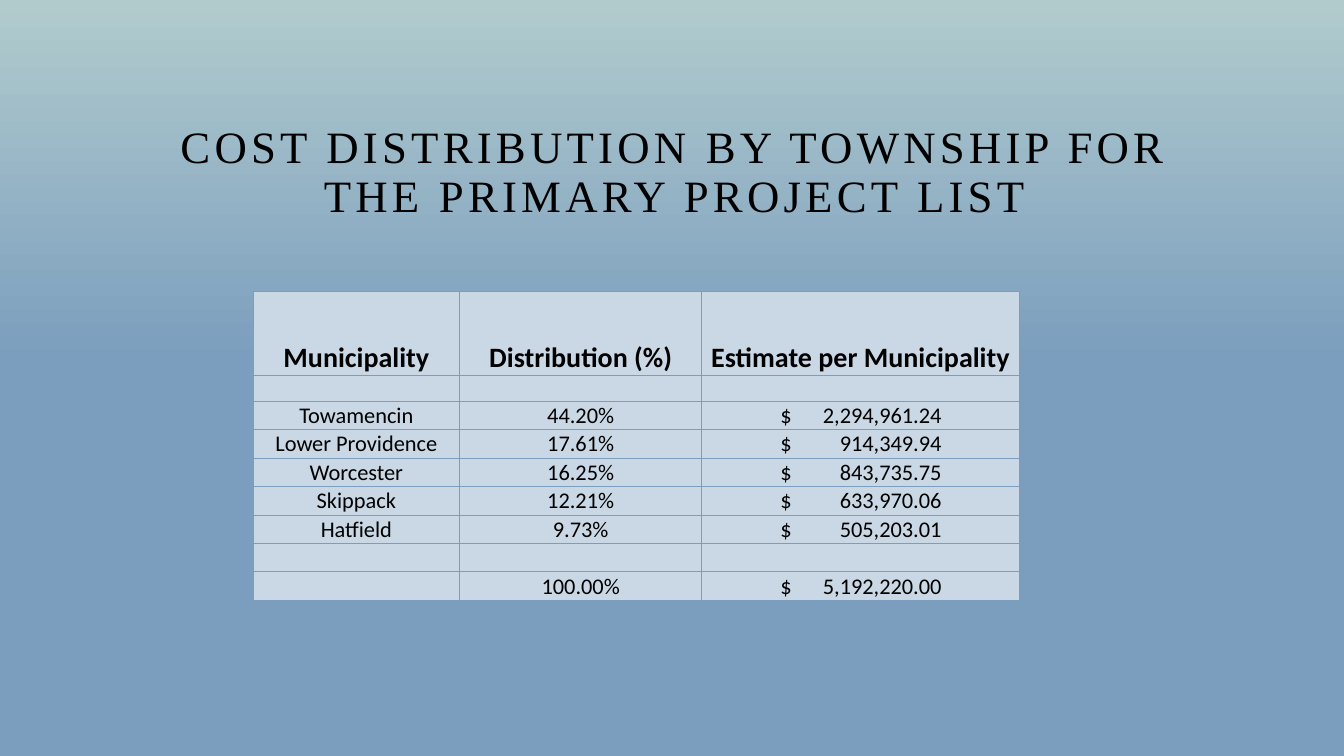
"""Build a slide with the cost distribution of a project list by township."""
from dataclasses import dataclass

from lxml.etree import SubElement
from pptx import Presentation
from pptx.dml.color import RGBColor
from pptx.enum.text import MSO_ANCHOR, MSO_AUTO_SIZE, PP_ALIGN
from pptx.oxml.ns import qn
from pptx.util import Inches, Pt


@dataclass(frozen=True)
class Theme:
    ink: str = "000000"
    cell: str = "CAD8E5"
    deep: str = "7B9EBE"
    pale: str = "B1CBCD"
    title_font: str = "Times New Roman"
    table_font: str = "Calibri"
    title_size: float = 32
    header_size: float = 20
    body_size: float = 16
    spacer_size: float = 14
    border_width: float = 0.5


@dataclass(frozen=True)
class Column:
    heading: str
    width: float


@dataclass(frozen=True)
class Row:
    texts: tuple[str, str, str]
    height: float
    size: float
    bold: bool = False


THEME = Theme()
SLIDE_WIDTH, SLIDE_HEIGHT = Inches(13.33), Inches(7.5)
TITLE = "COST DISTRIBUTION BY TOWNSHIP FOR THE PRIMARY PROJECT LIST"
COLUMNS = (
    Column("Municipality", 2.05),
    Column("Distribution (%)", 2.4),
    Column("Estimate per Municipality", 3.15),
)
SHARES = (
    ("Towamencin", "44.20%", "$\t2,294,961.24"),
    ("Lower Providence", "17.61%", "$\t914,349.94"),
    ("Worcester", "16.25%", "$\t843,735.75"),
    ("Skippack", "12.21%", "$\t633,970.06"),
    ("Hatfield", "9.73%", "$\t505,203.01"),
    ("", "", ""),
    ("", "100.00%", "$\t5,192,220.00"),
)
ROWS = (
    Row(tuple(column.heading for column in COLUMNS), 0.83, THEME.header_size, True),
    Row(("", "", ""), 0.26, THEME.spacer_size),
    *(Row(texts, 0.28, THEME.body_size) for texts in SHARES),
)
CELL_MARGIN = 0.01
AMOUNT_MARGIN, AMOUNT_WIDTH = 0.78, 1.6


def rgb(value: str) -> RGBColor:
    return RGBColor.from_string(value)


def style_font(font, name: str, size: float, bold: bool = False) -> None:
    font.name, font.size, font.bold = name, Pt(size), bold
    font.color.rgb = rgb(THEME.ink)


def paint_background(slide) -> None:
    fill = slide.background.fill
    fill.gradient()
    fill.gradient_angle = 90
    stops = ((0.52, THEME.deep), (1.0, THEME.pale))
    for stop, (position, color) in zip(fill.gradient_stops, stops):
        stop.position = position
        stop.color.rgb = rgb(color)


def add_title(slide) -> None:
    title = slide.shapes.title
    title.left, title.top = Inches(1.5), int(SLIDE_HEIGHT * 0.1)
    title.width, title.height = Inches(10.38), int(SLIDE_HEIGHT * 0.2)
    frame = title.text_frame
    frame.text = TITLE
    frame.word_wrap, frame.auto_size = True, MSO_AUTO_SIZE.NONE
    frame.vertical_anchor = MSO_ANCHOR.BOTTOM
    paragraph = frame.paragraphs[0]
    paragraph.alignment, paragraph.line_spacing = PP_ALIGN.CENTER, 0.9
    font = paragraph.runs[0].font
    style_font(font, THEME.title_font, THEME.title_size)
    paragraph.runs[0]._r.get_or_add_rPr().set("spc", "300")


def add_borders(cell) -> None:
    properties = cell._tc.get_or_add_tcPr()
    for side in ("lnL", "lnR", "lnT", "lnB"):
        line = SubElement(properties, qn(f"a:{side}"), w=str(Pt(THEME.border_width)))
        fill = SubElement(line, qn("a:solidFill"))
        SubElement(fill, qn("a:srgbClr"), val=THEME.deep)


def fill_cell(cell, text: str, row: Row) -> None:
    add_borders(cell)
    cell.fill.solid()
    cell.fill.fore_color.rgb = rgb(THEME.cell)
    cell.vertical_anchor = MSO_ANCHOR.BOTTOM
    cell.margin_left = cell.margin_right = cell.margin_top = Inches(CELL_MARGIN)
    cell.margin_bottom = 0
    paragraph = cell.text_frame.paragraphs[0]
    paragraph.text = text
    paragraph.alignment = PP_ALIGN.CENTER
    if "\t" in text:
        paragraph.alignment = PP_ALIGN.LEFT
        cell.margin_left = Inches(AMOUNT_MARGIN)
        tabs = SubElement(paragraph._p.get_or_add_pPr(), qn("a:tabLst"))
        SubElement(tabs, qn("a:tab"), pos=str(Inches(AMOUNT_WIDTH)), algn="r")
    for run in paragraph.runs:
        style_font(run.font, THEME.table_font, row.size, row.bold)
    if not text:
        paragraph._p.get_or_add_endParaRPr().set("sz", str(int(row.size * 100)))


def add_cost_table(slide) -> None:
    width = Inches(sum(column.width for column in COLUMNS))
    height = Inches(sum(row.height for row in ROWS))
    table = slide.shapes.add_table(
        len(ROWS), len(COLUMNS), Inches(2.51), Inches(2.89), width, height
    ).table
    for table_column, column in zip(table.columns, COLUMNS):
        table_column.width = Inches(column.width)
    for table_row, row in zip(table.rows, ROWS):
        table_row.height = Inches(row.height)
        for cell, text in zip(table_row.cells, row.texts):
            fill_cell(cell, text, row)


def main() -> None:
    presentation = Presentation()
    presentation.slide_width, presentation.slide_height = SLIDE_WIDTH, SLIDE_HEIGHT
    slide = presentation.slides.add_slide(presentation.slide_layouts[5])
    paint_background(slide)
    add_title(slide)
    add_cost_table(slide)
    presentation.save("out.pptx")


if __name__ == "__main__":
    main()
